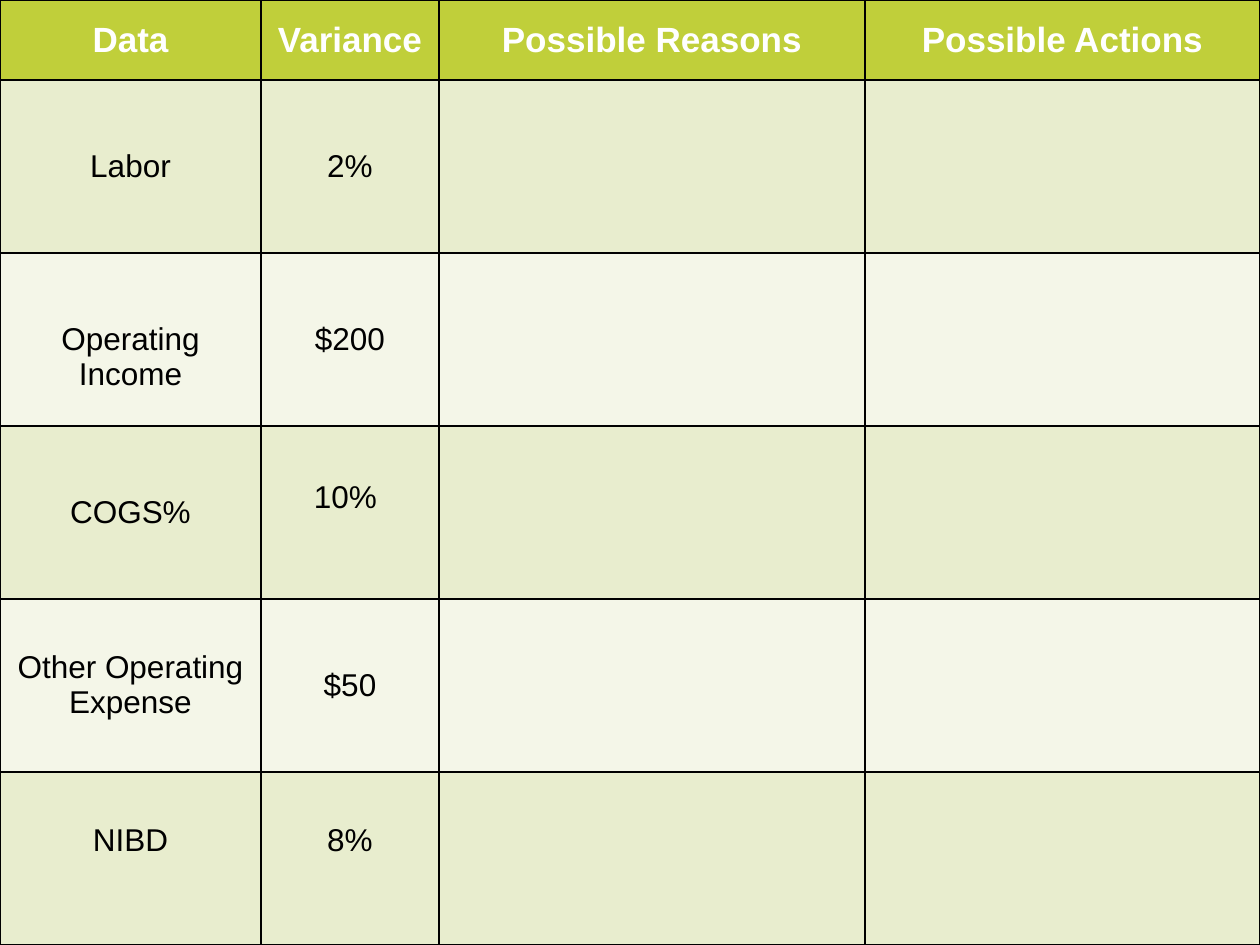
from lxml.etree import SubElement
from pptx import Presentation
from pptx.dml.color import RGBColor
from pptx.enum.text import MSO_ANCHOR, PP_ALIGN
from pptx.oxml.ns import qn
from pptx.util import Pt

PX = 914400 // 126
SLIDE_WIDTH, SLIDE_HEIGHT = 1260, 945
COLUMN_WIDTHS = [261, 178, 426, 395]
HEADER_HEIGHT = 80
MARGIN_X, MARGIN_Y = 9, 5
HEADER_FILL = "C0CF3A"
BAND_FILLS = ["E8EDCE", "F4F6E8"]
ROWS = [
    ["Data", "Variance", "Possible Reasons", "Possible Actions"],
    ["Labor", "2%", "", ""],
    ["Operating Income", "$200", "", ""],
    ["COGS%", "10%", "", ""],
    ["Other Operating Expense", "$50", "", ""],
    ["NIBD", "8%", "", ""],
]
EXTRA_MARGINS = {
    "Operating Income": {"top": 35},
    "10%": {"bottom": 30, "right": 9},
    "NIBD": {"bottom": 36},
    "8%": {"bottom": 36},
}


def color(value):
    """Return the colour for a hex string."""
    return RGBColor.from_string(value)


def add_borders(cell, line_color, width):
    """Draw a solid line on all four sides of a cell."""
    properties = cell._tc.get_or_add_tcPr()
    for side in ("a:lnL", "a:lnR", "a:lnT", "a:lnB"):
        line = SubElement(properties, qn(side), w=str(Pt(width)))
        fill = SubElement(line, qn("a:solidFill"))
        SubElement(fill, qn("a:srgbClr"), val=line_color)


def format_cell(cell, text, fill, is_header):
    """Give a cell its borders, fill, margins and centred text."""
    add_borders(cell, "000000", 1)
    cell.fill.solid()
    cell.fill.fore_color.rgb = color(fill)
    cell.vertical_anchor = MSO_ANCHOR.MIDDLE
    extra = EXTRA_MARGINS.get(text, {})
    cell.margin_left = MARGIN_X * PX
    cell.margin_right = (MARGIN_X + extra.get("right", 0)) * PX
    cell.margin_top = (MARGIN_Y + extra.get("top", 0)) * PX
    cell.margin_bottom = (MARGIN_Y + extra.get("bottom", 0)) * PX
    if not text:
        return
    paragraph = cell.text_frame.paragraphs[0]
    paragraph.alignment = PP_ALIGN.CENTER
    run = paragraph.add_run()
    run.text = text
    run.font.name = "Arial"
    run.font.size = Pt(20 if is_header else 18)
    run.font.bold = is_header
    run.font.color.rgb = color("FFFFFF" if is_header else "000000")


def add_variance_table(slide, left, top, width, height):
    """Place the variance table in the given box."""
    frame = slide.shapes.add_table(
        len(ROWS), len(COLUMN_WIDTHS), left * PX, top * PX, width * PX, height * PX
    )
    table = frame.table
    for column, column_width in zip(table.columns, COLUMN_WIDTHS):
        column.width = column_width * PX
    body_height = (height - HEADER_HEIGHT) // (len(ROWS) - 1)
    for row_index, texts in enumerate(ROWS):
        is_header = row_index == 0
        table.rows[row_index].height = (HEADER_HEIGHT if is_header else body_height) * PX
        fill = HEADER_FILL if is_header else BAND_FILLS[(row_index - 1) % 2]
        for column_index, text in enumerate(texts):
            format_cell(table.cell(row_index, column_index), text, fill, is_header)


def main():
    """Build and save the presentation."""
    presentation = Presentation()
    presentation.slide_width = SLIDE_WIDTH * PX
    presentation.slide_height = SLIDE_HEIGHT * PX
    slide = presentation.slides.add_slide(presentation.slide_layouts[6])
    add_variance_table(slide, 0, 0, SLIDE_WIDTH, SLIDE_HEIGHT)
    presentation.save("out.pptx")


if __name__ == "__main__":
    main()
